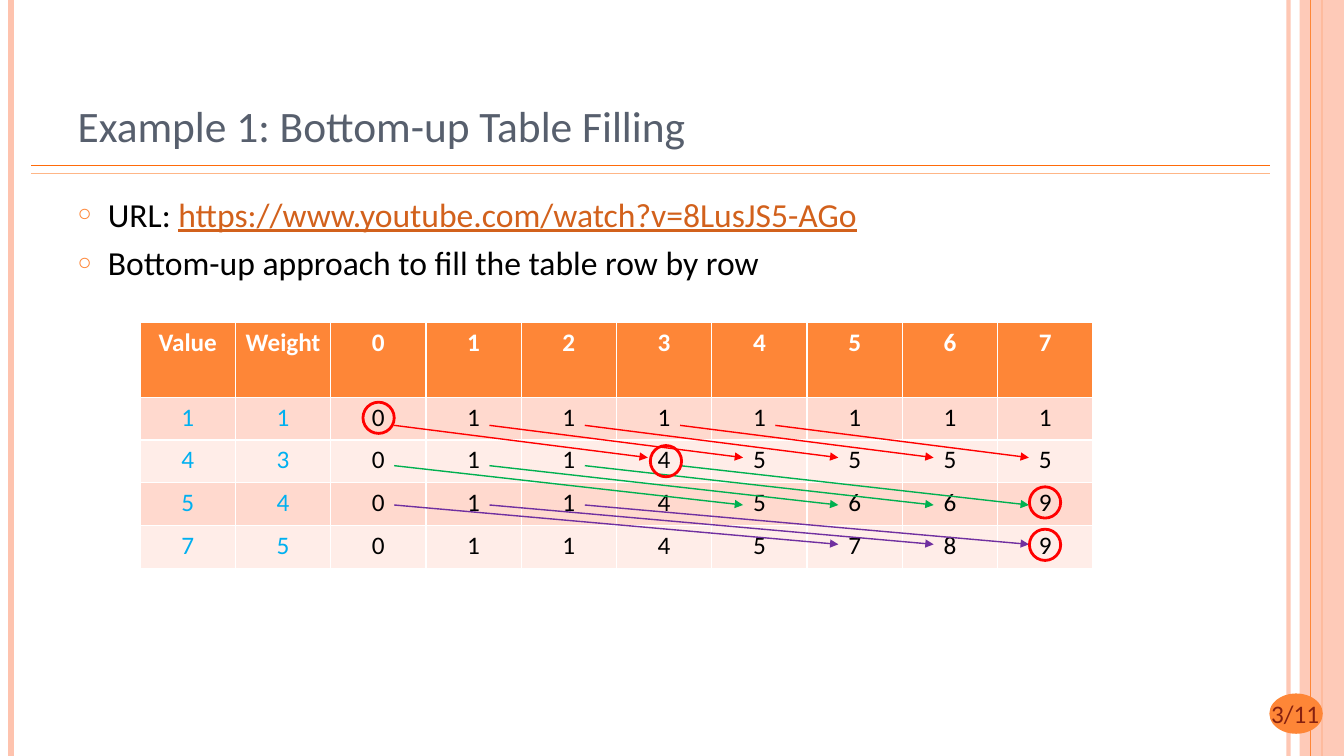
from lxml import etree
from pptx import Presentation
from pptx.dml.color import RGBColor
from pptx.enum import shapes, text
from pptx.oxml import ns
from pptx.util import Inches, Pt

ORANGE, PEACH, RED = "FE8637", "FEC3AE", "FF0000"
color = RGBColor.from_string


def write(paragraph, words, size=18, ink="000000", bold=False, underline=False, align=None):
    paragraph.alignment = align
    run = paragraph.add_run()
    run.text = words
    run.font.name = "Calibri"
    run.font.size = Pt(size)
    run.font.bold = bold
    run.font.underline = underline
    run.font.color.rgb = color(ink)


def draw_line(x1, y1, x2, y2, ink, width, arrow=False):
    line = slide.shapes.add_connector(
        shapes.MSO_CONNECTOR.STRAIGHT, Inches(x1), Inches(y1), Inches(x2), Inches(y2))
    line.line.color.rgb = color(ink)
    line.line.width = Pt(width)
    if arrow:
        etree.SubElement(line.line._get_or_add_ln(), ns.qn("a:tailEnd"), type="triangle")
    etree.SubElement(line._element.spPr, ns.qn("a:effectLst"))
    return line


deck = Presentation()
deck.slide_width, deck.slide_height = Inches(13.33), Inches(7.5)
slide = deck.slides.add_slide(deck.slide_layouts[1])
center = text.PP_ALIGN.CENTER

# Side stripes, title rules and page badge
stripe = draw_line(12.78, 0, 12.78, 7.5, PEACH, 3)
draw_line(0.11, 0, 0.11, 7.5, PEACH, 4.5)
draw_line(13.11, 0, 13.11, 7.5, ORANGE, 1.5)
band = slide.shapes.add_shape(
    shapes.MSO_SHAPE.RECTANGLE, Inches(12.89), 0, Inches(0.44), Inches(7.5))
band.shadow.inherit = False
band.fill.solid()
band.fill.fore_color.rgb = color(PEACH)
band.line.fill.background()
for part, opacity in ((stripe, 93), (band, 87)):
    fill_color = next(part._element.spPr.iter(ns.qn("a:srgbClr")))
    etree.SubElement(fill_color, ns.qn("a:alpha"), val=str(opacity * 1000))
draw_line(13, 0, 13, 7.5, ORANGE, 0.75)
draw_line(0.31, 1.64, 12.6, 1.64, "FF6B0A", 1)
draw_line(0.31, 1.72, 12.6, 1.72, "FEB687", 1)

badge = slide.shapes.add_shape(
    shapes.MSO_SHAPE.OVAL, Inches(12.59), Inches(6.88), Inches(0.53), Inches(0.4))
badge.shadow.inherit = False
badge.fill.solid()
badge.fill.fore_color.rgb = color(ORANGE)
badge.line.fill.background()
page = slide.shapes.add_textbox(Inches(12.24), Inches(6.88), Inches(1.21), Inches(0.4))
page.text_frame.word_wrap = True
write(page.text_frame.paragraphs[0], "3/11", ink="862110", align=center)

# Title and bullets
title, body = slide.shapes.title, slide.placeholders[1]
for holder, top, height, anchor in ((title, 0.3, 1.25, text.MSO_ANCHOR.BOTTOM),
                                    (body, 1.87, 5.21, text.MSO_ANCHOR.TOP)):
    holder.left, holder.top = Inches(0.67), Inches(top)
    holder.width, holder.height = Inches(10.89), Inches(height)
    holder.text_frame.vertical_anchor = anchor
    holder.text_frame.auto_size = text.MSO_AUTO_SIZE.NONE
write(title.text_frame.paragraphs[0], "Example 1: Bottom-up Table Filling",
      size=31, ink="575F6D", align=text.PP_ALIGN.LEFT)

link_bullet = body.text_frame.paragraphs[0]
approach_bullet = body.text_frame.add_paragraph()
for bullet, space in ((link_bullet, 0), (approach_bullet, 6)):
    props = bullet._p.get_or_add_pPr()
    props.set("marL", str(Inches(0.3)))
    props.set("indent", str(Inches(-0.3)))
    bullet_color = etree.SubElement(props, ns.qn("a:buClr"))
    etree.SubElement(bullet_color, ns.qn("a:srgbClr"), val=ORANGE)
    etree.SubElement(props, ns.qn("a:buSzPct"), val="70000")
    etree.SubElement(props, ns.qn("a:buChar"), char="○")
    bullet.space_before = Pt(space)
write(link_bullet, "URL: ", size=24)
write(link_bullet, "https://www.youtube.com/watch?v=8LusJS5-AGo",
      size=24, ink="D2611C", underline=True)
write(approach_bullet, "Bottom-up approach to fill the table row by row", size=24)

# Knapsack table
rows = [
    ["Value", "Weight", 0, 1, 2, 3, 4, 5, 6, 7],
    [1, 1, 0, 1, 1, 1, 1, 1, 1, 1],
    [4, 3, 0, 1, 1, 4, 5, 5, 5, 5],
    [5, 4, 0, 1, 1, 4, 5, 6, 6, 9],
    [7, 5, 0, 1, 1, 4, 5, 7, 8, 9],
]
column_width = 0.945
knapsack = slide.shapes.add_table(
    len(rows), len(rows[0]), Inches(1.39), Inches(3.2), Inches(9.45), Inches(2.44)).table
for column in knapsack.columns:
    column.width = Inches(column_width)
for r, row in enumerate(rows):
    knapsack.rows[r].height = Inches(0.425 if r else 0.74)
    for c, entry in enumerate(row):
        cell = knapsack.cell(r, c)
        cell.fill.solid()
        cell.fill.fore_color.rgb = color(("FFEDE8", "FFD9CE")[r % 2] if r else ORANGE)
        ink = "FFFFFF" if r == 0 else "00B0F0" if c < 2 else "000000"
        write(cell.text_frame.paragraphs[0], str(entry), ink=ink, bold=r == 0, align=center)

# Each arrow moves right by the item's weight, as far as capacity 7
for weight, ink, start_y, end_y in ((3, RED, 4.22, 4.54),
                                    (4, "00B050", 4.62, 5.01),
                                    (5, "7030A0", 5.01, 5.4)):
    for capacity in range(8 - weight):
        draw_line(3.91 + column_width * capacity, start_y,
                  3.59 + column_width * (capacity + weight), end_y, ink, 1, arrow=True)

# Rings mark the chosen path
for left, top in ((10.21, 5.25), (10.21, 4.83), (6.45, 4.42), (3.6, 3.99)):
    ring = slide.shapes.add_shape(
        shapes.MSO_SHAPE.OVAL, Inches(left), Inches(top), Inches(0.31), Inches(0.31))
    ring.shadow.inherit = False
    ring.fill.background()
    ring.line.color.rgb = color(RED)
    ring.line.width = Pt(2)

deck.save("out.pptx")
